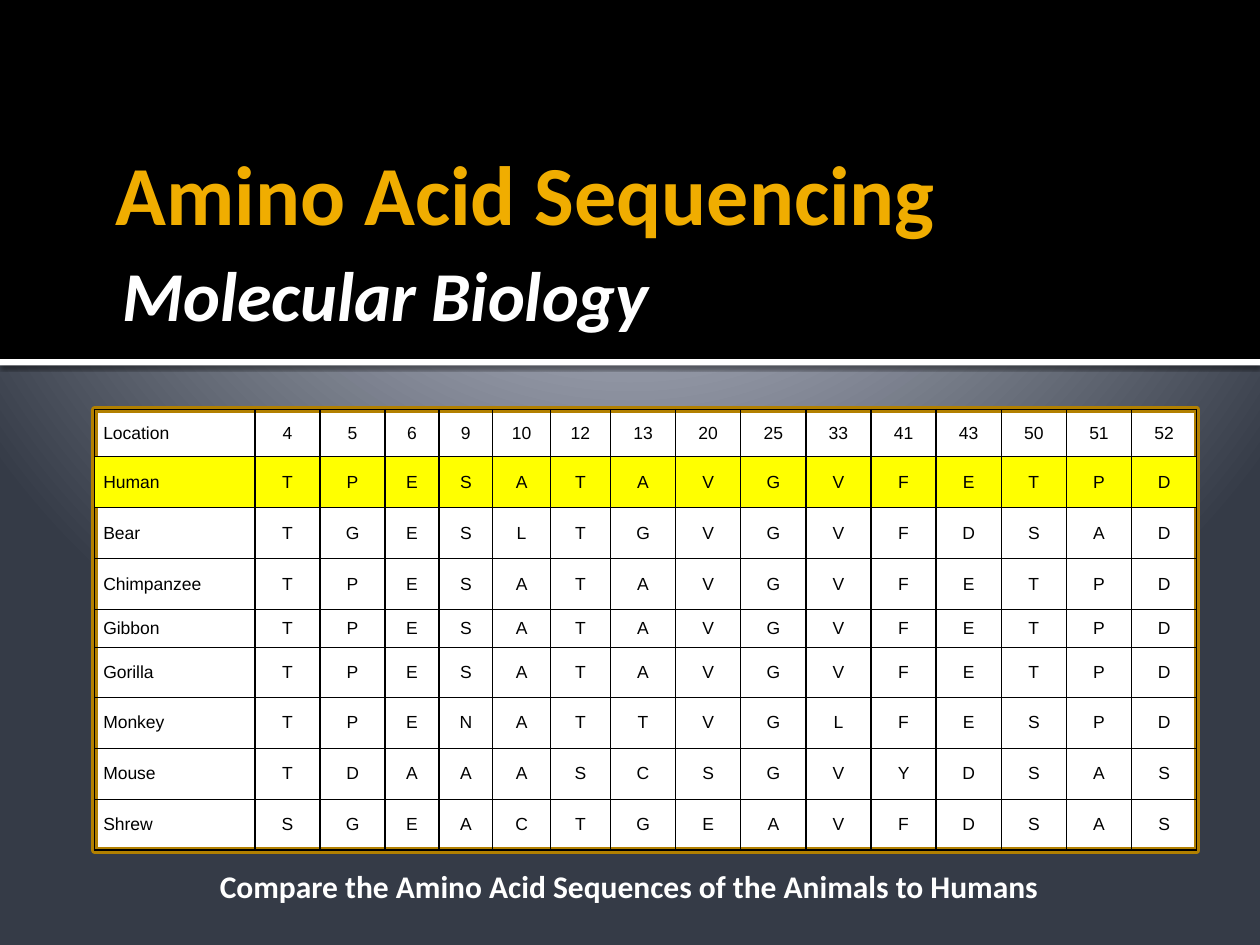
import pptx
import pptx.util
import pptx.dml.color
import pptx.enum.shapes
import pptx.enum.text
import pptx.oxml
import pptx.oxml.ns

# Content
SIZE = (10, 7.5)
HEAD = "4 5 6 9 10 12 13 20 25 33 41 43 50 51 52".split()
ROWS = [
    ("Location", HEAD),
    ("Human", "TPESATAVGVFETPD"),
    ("Bear", "TGESLTGVGVFDSAD"),
    ("Chimpanzee", "TPESATAVGVFETPD"),
    ("Gibbon", "TPESATAVGVFETPD"),
    ("Gorilla", "TPESATAVGVFETPD"),
    ("Monkey", "TPENATTVGLFESPD"),
    ("Mouse", "TDAAASCSGVYDSAS"),
    ("Shrew", "SGEACTGEAVFDSAS"),
]
MARKED = "Human"
WIDE = [1.28, 0.52, 0.52, 0.43, 0.43, 0.46, 0.48] + [0.52] * 9
TALL = [0.37, 0.4, 0.4, 0.4, 0.3, 0.39, 0.4, 0.4, 0.4]
GRID = (0.75, 3.25, 8.75, 3.5)
BANDS = [((0, 0, 10, 2.85), "000000"), ((0, 2.85, 10, 0.05), "FFFFFF")]
GLOW = [(0, "C1C5D3"), (12, "C1C5D3"), (20, "BFC4D2"), (100, "353B47")]

TOP, MID, LOW = (pptx.enum.text.MSO_ANCHOR.TOP, pptx.enum.text.MSO_ANCHOR.MIDDLE,
                 pptx.enum.text.MSO_ANCHOR.BOTTOM)
LEFT, CENTER = pptx.enum.text.PP_ALIGN.LEFT, pptx.enum.text.PP_ALIGN.CENTER
TEXTS = [
    ("Amino Acid Sequencing", (0.82, 0.13, 8.76, 1.79), "F0AD00", LEFT, LOW,
     (0.1, 0, 0.1, 0), {"size": 48, "bold": True}),
    ("Molecular Biology", (0.81, 2, 8.77, 0.75), "FFFFFF", LEFT, TOP,
     (0.16, 0, 0.05, 0), {"size": 40, "bold": True, "italic": True}),
    ("Compare the Amino Acid Sequences of the Animals to Humans",
     (1.08, 6.83, 7.83, 0.4), "FFFFFF", CENTER, TOP,
     (0.1, 0.05, 0.1, 0.05), {"size": 18, "bold": True}),
]
NS = pptx.oxml.ns.nsdecls("a")


def color(code):
    return pptx.dml.color.RGBColor.from_string(code)


def inches(nums):
    return [pptx.util.Inches(n) for n in nums]


def share(parts, total):
    return inches(p * total / sum(parts) for p in parts)


def xml(text):
    return pptx.oxml.parse_xml(text)


def write(frame, text, tint, align, form):
    para = frame.paragraphs[0]
    para.alignment = align
    run = para.add_run()
    run.text = text
    run.font.color.rgb = color(tint)
    for key, val in form.items():
        setattr(run.font, key, pptx.util.Pt(val) if key == "size" else val)


def pad(part, sides):
    for name, val in zip(("left", "top", "right", "bottom"), inches(sides)):
        setattr(part, "margin_" + name, val)


def box(slide, place, tint):
    rect = slide.shapes.add_shape(
        pptx.enum.shapes.MSO_SHAPE.RECTANGLE, *inches(place))
    rect.shadow.inherit = False
    rect.fill.solid()
    rect.fill.fore_color.rgb = color(tint)
    rect.line.fill.background()
    return rect


def border(cell):
    props = cell._tc.get_or_add_tcPr()
    for side in ("lnL", "lnR", "lnT", "lnB"):
        props.append(xml(
            f'<a:{side} {NS} w="12700"><a:solidFill><a:srgbClr val="000000"/>'
            f'</a:solidFill></a:{side}>'))


def backdrop(slide):
    slide.background.fill.solid()
    stops = "".join(f'<a:gs pos="{pos * 1000}"><a:srgbClr val="{tint}"/></a:gs>'
                    for pos, tint in GLOW)
    solid = slide.element.find(".//" + pptx.oxml.ns.qn("p:bgPr"))[0]
    solid.getparent().replace(solid, xml(
        f'<a:gradFill {NS}><a:gsLst>{stops}</a:gsLst><a:path path="circle">'
        '<a:fillToRect l="10000" t="-25000" r="10000" b="125000"/>'
        '</a:path></a:gradFill>'))


def shade(rect):
    props = rect._element.spPr
    old = props.find(pptx.oxml.ns.qn("a:effectLst"))
    props.replace(old, xml(
        f'<a:effectLst {NS}><a:outerShdw blurRad="31750" dist="10160" '
        'dir="5400000" rotWithShape="0"><a:srgbClr val="000000">'
        '<a:alpha val="60000"/></a:srgbClr></a:outerShdw></a:effectLst>'))


def chart(slide):
    table = slide.shapes.add_table(len(ROWS), len(WIDE), *inches(GRID)).table
    for flag in ("first_row", "horz_banding"):
        setattr(table, flag, False)
    for col, width in zip(table.columns, share(WIDE, GRID[2])):
        col.width = width
    for row, height in zip(table.rows, share(TALL, GRID[3])):
        row.height = height
    for r, (name, codes) in enumerate(ROWS):
        for c, text in enumerate([name, *codes]):
            cell = table.cell(r, c)
            border(cell)
            if name == MARKED:
                cell.fill.solid()
                cell.fill.fore_color.rgb = color("FFFF00")
            else:
                cell.fill.background()
            cell.vertical_anchor = MID
            pad(cell, (0.07, 0, 0.07, 0))
            write(cell.text_frame, text, "000000", CENTER if c else LEFT,
                  {"size": 10, "name": "Arial"})


def main():
    deck = pptx.Presentation()
    deck.slide_width, deck.slide_height = inches(SIZE)
    slide = deck.slides.add_slide(deck.slide_layouts[6])

    # Background and bands
    backdrop(slide)
    bands = [box(slide, *band) for band in BANDS]
    shade(bands[-1])

    # Framed table
    frame = box(slide, GRID, "FFFFFF")
    frame.line.color.rgb = color("B28000")
    frame.line.width = pptx.util.Pt(3.78)
    chart(slide)

    # Titles and caption
    for text, place, tint, align, anchor, sides, form in TEXTS:
        body = slide.shapes.add_textbox(*inches(place)).text_frame
        body.word_wrap = True
        body.vertical_anchor = anchor
        pad(body, sides)
        write(body, text, tint, align, {"name": "Calibri", **form})

    deck.save("out.pptx")


if __name__ == "__main__":
    main()
